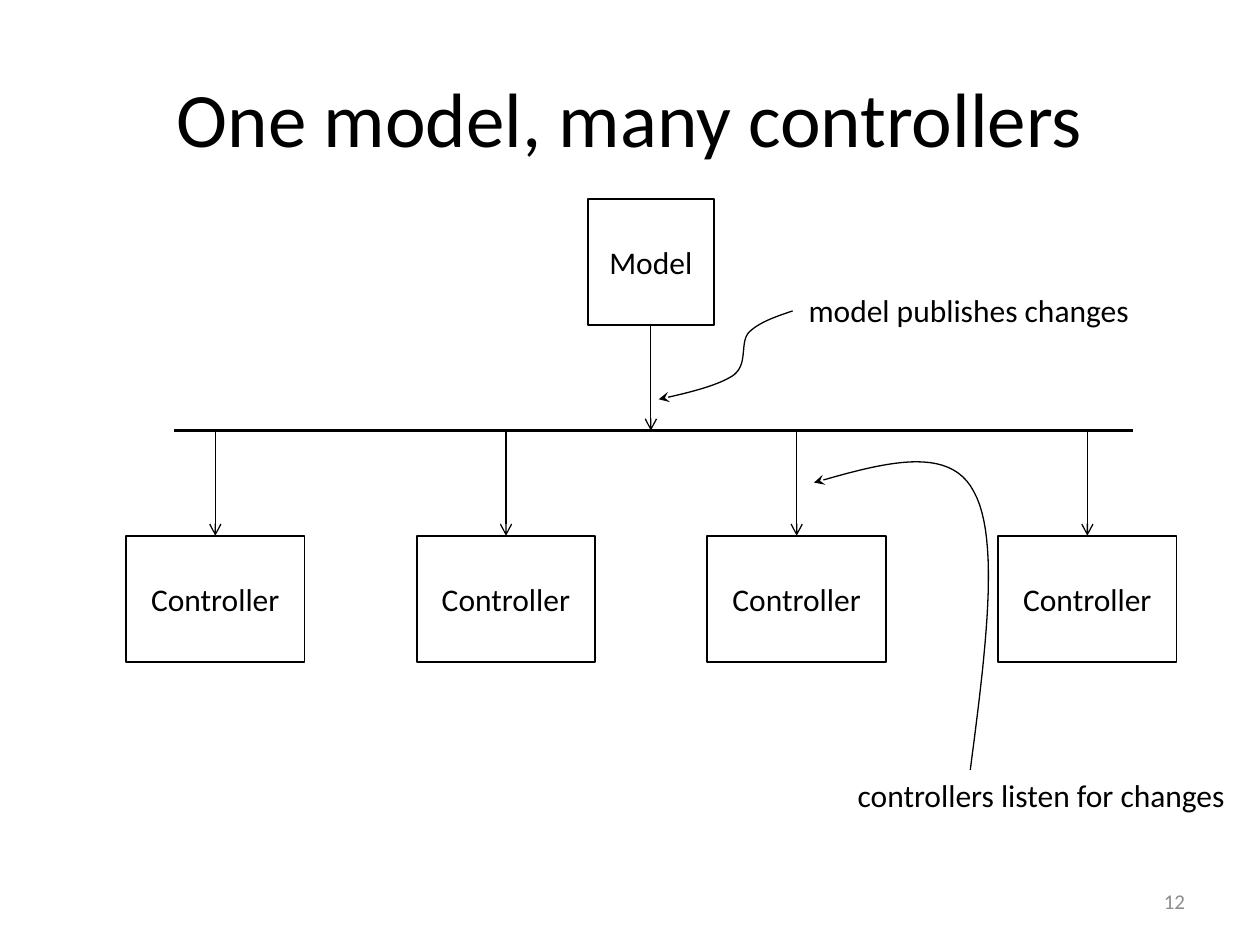
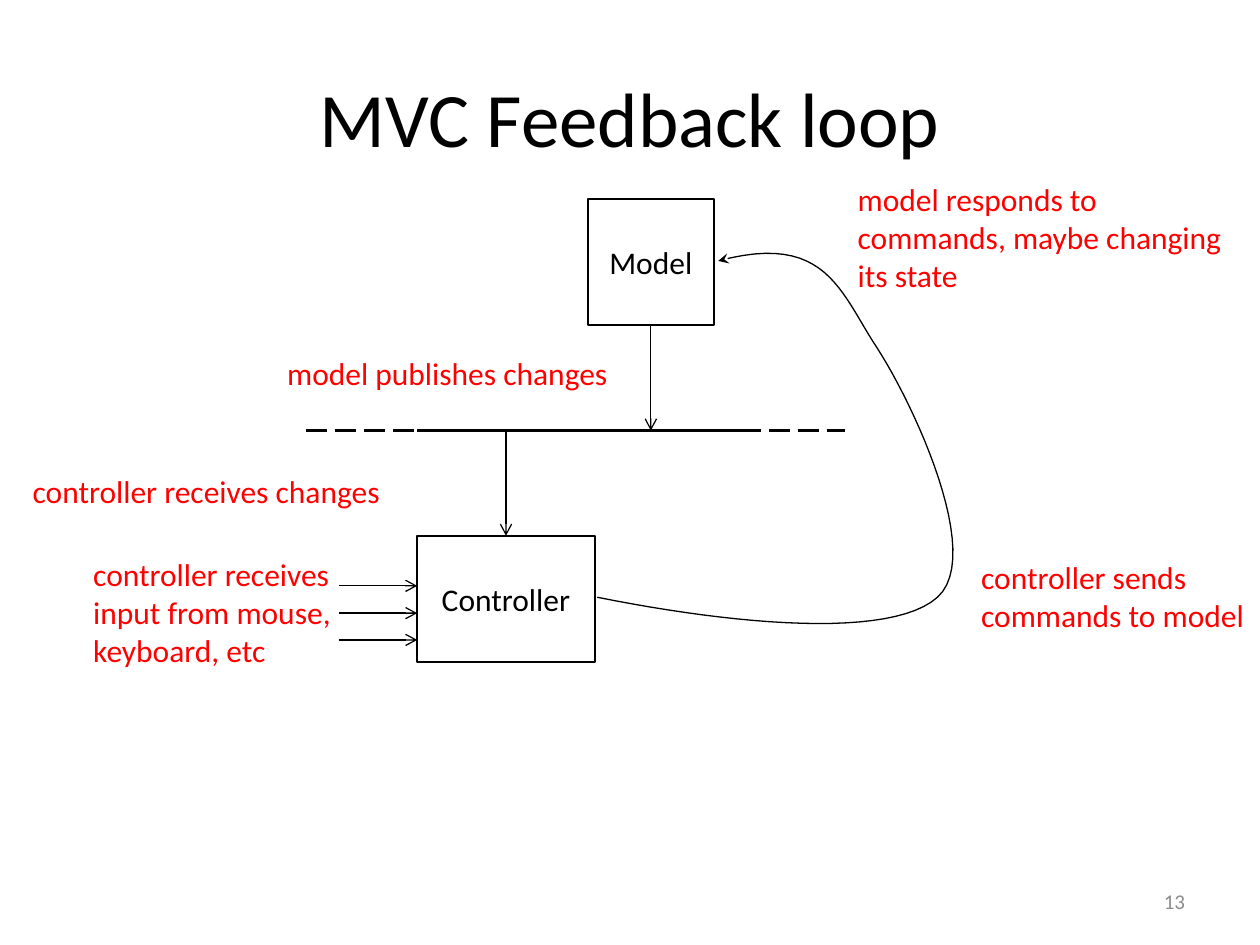
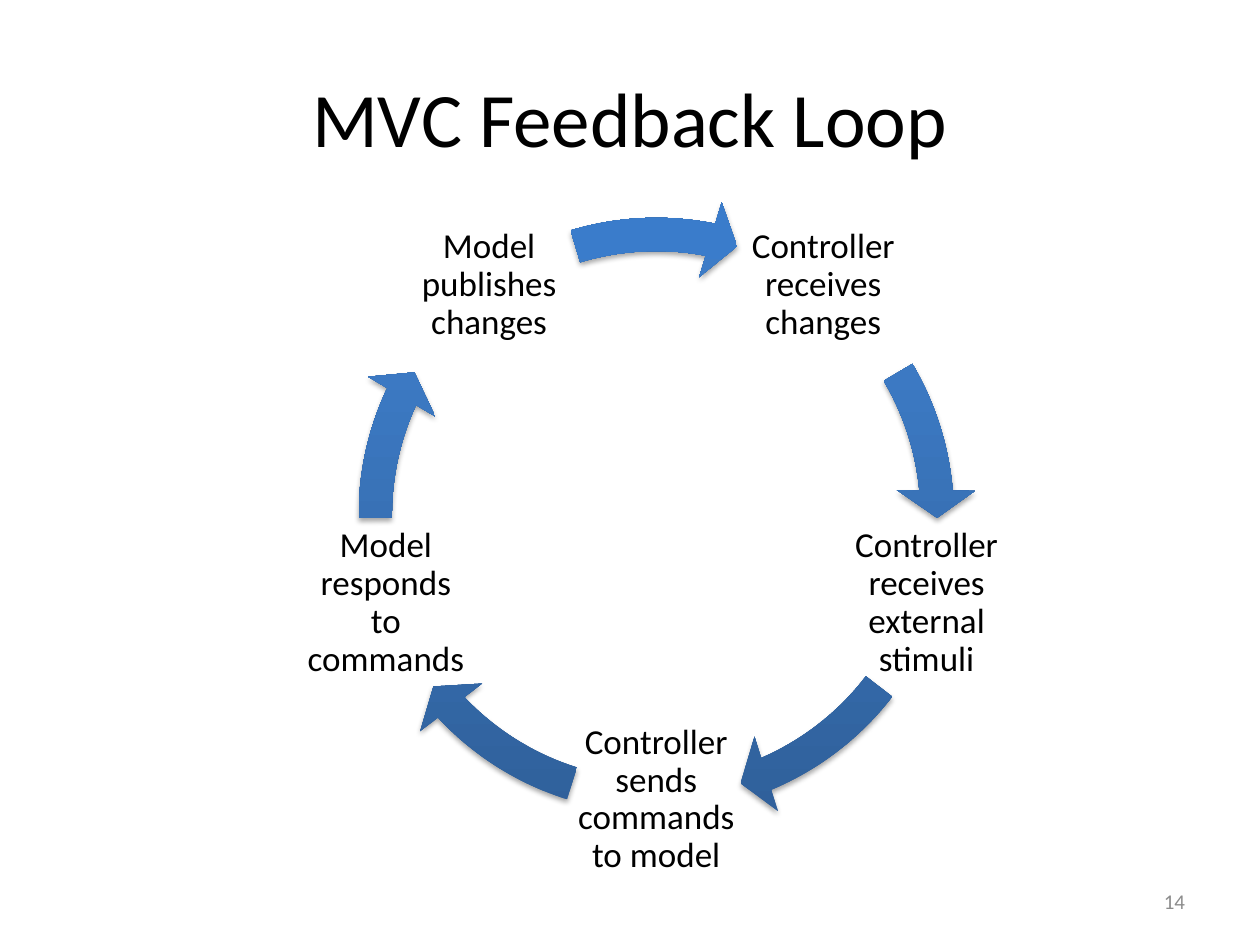
import copy
import math
import pptx
import pptx.dml.color
import pptx.enum.dml
import pptx.enum.shapes
import pptx.enum.text
import pptx.oxml
import pptx.oxml.ns
import pptx.util

Cm = pptx.util.Cm
Pt = pptx.util.Pt
ALIGN = pptx.enum.text.PP_ALIGN
ANCHOR = pptx.enum.text.MSO_ANCHOR
SHAPE = pptx.enum.shapes.MSO_SHAPE

THEME = {
    "font": "Calibri",
    "ink": "000000",
    "accent": "FF0000",
    "muted": "8C8C8C",
    "paper": "FFFFFF",
    "gradient": [(0, "2F5F99"), (0.8, "3D7CC7"), (1, "3A7CCB")],
    "title": 44,
    "body": 18,
    "cycle": 20,
    "footer": 12,
    "thin": 0.75,
    "outline": 1,
    "bus": 1.5,
}

SLIDE_SIZE = (25.4, 19.05)
TITLE_BOX = (1.27, 0.76, 22.86, 3.18)
NUMBER_BOX = (18.21, 17.65, 5.93, 1.02)
MODEL_BOX = (11.85, 4.02, 2.54, 2.54)
CONTROLLER_LEFT, CONTROLLER_PITCH = 2.54, 5.86
CONTROLLER_TOP, CONTROLLER_WIDTH, CONTROLLER_HEIGHT = 10.8, 3.6, 2.54
BUS_Y = 8.68
CURVE_STEPS = 24

DIAGRAMS = [
    {
        "title": "One model, many controllers",
        "number": 12,
        "columns": [0, 1, 2, 3],
        "buses": [(3.51, 22.84, None)],
        "color": "ink",
        "labels": [
            (["model publishes changes"], (16.05, 5.74, 7.06, 1.03), False),
            (["controllers listen for changes"], (17.04, 15.52, 8, 1.03), False),
        ],
        "curves": [
            [(15.98, 6.27), (15.65, 6.38), (15.29, 6.5), (15.09, 6.71),
             (14.91, 6.93), (15.09, 7.34), (14.78, 7.57),
             (14.48, 7.77), (13.89, 7.92), (13.28, 8.05)],
            [(19.56, 15.52), (19.86, 13.21), (20.17, 10.87), (19.63, 9.91),
             (19.13, 8.94), (17.75, 9.35), (16.41, 9.73)],
        ],
        "input_arrows": [],
    },
    {
        "title": "MVC Feedback loop",
        "number": 13,
        "columns": [1],
        "buses": [
            (8.41, 15.06, None),
            (6.17, 17.04, pptx.enum.dml.MSO_LINE.LONG_DASH),
        ],
        "color": "accent",
        "labels": [
            (["controller receives changes"], (0.41, 9.4, 7.59, 1.03), False),
            (["controller receives", "input from mouse, keyboard, etc"],
             (1.63, 11.07, 5.97, 2.57), True),
            (["model publishes changes"], (5.54, 7.01, 7.06, 1.03), False),
            (["controller sends", "commands to model"],
             (19.53, 11.13, 5.87, 1.8), False),
            (["model responds to commands, maybe changing its state"],
             (17.04, 3.51, 8.36, 2.57), True),
        ],
        "curves": [
            [(12.04, 12.04), (14.83, 12.6), (17.96, 12.88), (18.9, 12.04),
             (19.84, 11.2), (18.42, 8.15), (17.68, 7.01),
             (16.94, 5.89), (16.66, 4.67), (14.48, 5.26)],
        ],
        "input_arrows": [11.81, 12.36, 12.9],
    },
]

INPUT_ARROW_X = (6.83, 8.41)

CYCLE = {
    "title": "MVC Feedback Loop",
    "number": 14,
    "center": (13.23, 10.39),
    "radius": 5.73,
    "box": 3.43,
    "ring": 12.9,
    "steps": [
        ("Controller receives changes", 329.41, 354.92),
        ("Controller receives external stimuli", 37.52, 66.95),
        ("Controller sends commands to model", 107.46, 136.89),
        ("Model responds to commands", 179.49, 205.01),
        ("Model publishes changes", 253.28, 281.13),
    ],
}


def rgb(value):
    return pptx.dml.color.RGBColor.from_string(value)


def lengths(values):
    return [Cm(value) for value in values]


def set_attributes(target, values):
    for name, value in values.items():
        setattr(target, name, value)


def write(shape, lines, size, color="ink", frame=None, paragraph_format=None):
    text_frame = shape.text_frame
    set_attributes(text_frame, {"word_wrap": True, **(frame or {})})
    text_frame.text = "\n".join(lines)
    for paragraph in text_frame.paragraphs:
        set_attributes(paragraph, paragraph_format or {})
        set_attributes(paragraph.font, {"name": THEME["font"], "size": Pt(THEME[size])})
        paragraph.font.color.rgb = rgb(THEME[color])


def add_text(slide, box, *text, **formats):
    write(slide.shapes.add_textbox(*lengths(box)), *text, **formats)


def draw_line(shape, width, head=None, dash=None):
    shape.line.color.rgb = rgb(THEME["ink"])
    set_attributes(shape.line, {"width": Pt(THEME[width]), "dash_style": dash})
    properties = shape.element.spPr
    if head:
        line = properties.find(pptx.oxml.ns.qn("a:ln"))
        line.append(pptx.oxml.parse_xml(
            f'<a:tailEnd {pptx.oxml.ns.nsdecls("a")} type="{head}"/>'))


def add_straight(slide, start, end, width="thin", head="arrow", dash=None):
    connector = slide.shapes.add_connector(
        pptx.enum.shapes.MSO_CONNECTOR.STRAIGHT, *lengths(start + end))
    draw_line(connector, width, head, dash)
    connector.element.spPr.append(pptx.oxml.parse_xml(
        f'<a:effectLst {pptx.oxml.ns.nsdecls("a")}/>'))
    return connector


def add_box(slide, text, box):
    shape = slide.shapes.add_shape(SHAPE.RECTANGLE, *lengths(box))
    shape.shadow.inherit = False
    shape.fill.background()
    draw_line(shape, "outline")
    write(shape, [text], "body", frame={"vertical_anchor": ANCHOR.MIDDLE},
          paragraph_format={"alignment": ALIGN.CENTER})
    return shape


def bezier_points(points):
    for first in range(0, len(points) - 1, 3):
        controls = points[first:first + 4]
        for step in range(1, CURVE_STEPS + 1):
            t = step / CURVE_STEPS
            weights = [math.comb(3, k) * t ** k * (1 - t) ** (3 - k) for k in range(4)]
            yield tuple(Cm(sum(weight * point[axis] for weight, point in zip(weights, controls)))
                        for axis in (0, 1))


def add_curve(slide, points):
    builder = slide.shapes.build_freeform(*lengths(points[0]))
    builder.add_line_segments(list(bezier_points(points)), close=False)
    curve = builder.convert_to_shape()
    curve.shadow.inherit = False
    curve.fill.background()
    draw_line(curve, "thin", "stealth")


def add_slide(presentation, content):
    slide = presentation.slides.add_slide(presentation.slide_layouts[6])
    slide.background.fill.solid()
    slide.background.fill.fore_color.rgb = rgb(THEME["paper"])
    middle = {"vertical_anchor": ANCHOR.MIDDLE}
    add_text(slide, TITLE_BOX, [content["title"]], "title", frame=middle,
             paragraph_format={"alignment": ALIGN.CENTER})
    add_text(slide, NUMBER_BOX, [str(content["number"])], "footer", "muted", frame=middle,
             paragraph_format={"alignment": ALIGN.RIGHT})
    return slide


def build_diagram(presentation, content):
    slide = add_slide(presentation, content)
    model = add_box(slide, "Model", MODEL_BOX)
    for start, end, dash in content["buses"]:
        add_straight(slide, (start, BUS_Y), (end, BUS_Y), "bus", None, dash)
    model_x = MODEL_BOX[0] + MODEL_BOX[2] / 2
    publish = add_straight(slide, (model_x, MODEL_BOX[1] + MODEL_BOX[3]), (model_x, BUS_Y))
    publish.begin_connect(model, 2)
    for column in content["columns"]:
        left = CONTROLLER_LEFT + column * CONTROLLER_PITCH
        controller = add_box(slide, "Controller",
                             (left, CONTROLLER_TOP, CONTROLLER_WIDTH, CONTROLLER_HEIGHT))
        x = left + CONTROLLER_WIDTH / 2
        listen = add_straight(slide, (x, BUS_Y), (x, CONTROLLER_TOP))
        listen.end_connect(controller, 0)
    for y in content["input_arrows"]:
        add_straight(slide, (INPUT_ARROW_X[0], y), (INPUT_ARROW_X[1], y))
    for lines, box, wrap in content["labels"]:
        add_text(slide, box, lines, "body", content["color"], frame={"word_wrap": wrap})
    for points in content["curves"]:
        add_curve(slide, points)


def fill_cycle_arrow(arrow):
    arrow.fill.gradient()
    arrow.fill.gradient_angle = 90
    stop_list = arrow.element.spPr.find(pptx.oxml.ns.qn("a:gradFill"))[0]
    stop_list.append(copy.deepcopy(stop_list[-1]))
    for stop, (position, color) in zip(arrow.fill.gradient_stops, THEME["gradient"]):
        stop.position = position
        stop.color.rgb = rgb(color)
    arrow.line.fill.background()
    arrow.shadow.inherit = False
    arrow.element.spPr.find(pptx.oxml.ns.qn("a:effectLst")).append(pptx.oxml.parse_xml(
        f'<a:outerShdw {pptx.oxml.ns.nsdecls("a")} blurRad="{Pt(3.1)}" dist="{Pt(1.8)}" '
        f'dir="5400000" rotWithShape="0"><a:srgbClr val="{THEME["ink"]}">'
        '<a:alpha val="35000"/></a:srgbClr></a:outerShdw>'))


def build_cycle(presentation, content):
    slide = add_slide(presentation, content)
    center_x, center_y = content["center"]
    size, ring = content["box"], content["ring"]
    margins = {f"margin_{side}": Cm(0.08) for side in ("left", "top", "right", "bottom")}
    for index, (text, start, end) in enumerate(content["steps"]):
        angle = math.radians(index * 360 / len(content["steps"]) - 54)
        left = center_x + content["radius"] * math.cos(angle) - size / 2
        top = center_y + content["radius"] * math.sin(angle) - size / 2
        add_text(slide, (left, top, size, size), [text], "cycle",
                 frame={"vertical_anchor": ANCHOR.MIDDLE, **margins},
                 paragraph_format={"alignment": ALIGN.CENTER, "line_spacing": 0.9})
        arrow = slide.shapes.add_shape(SHAPE.CIRCULAR_ARROW, *lengths(
            (center_x - ring / 2, center_y - ring / 2, ring, ring)))
        for position, value in enumerate((0.052, 3.354, end * 0.6, start * 0.6, 0.061)):
            arrow.adjustments[position] = value
        fill_cycle_arrow(arrow)


def main():
    presentation = pptx.Presentation()
    presentation.slide_width, presentation.slide_height = lengths(SLIDE_SIZE)
    for content in DIAGRAMS:
        build_diagram(presentation, content)
    build_cycle(presentation, CYCLE)
    presentation.save("out.pptx")


if __name__ == "__main__":
    main()
